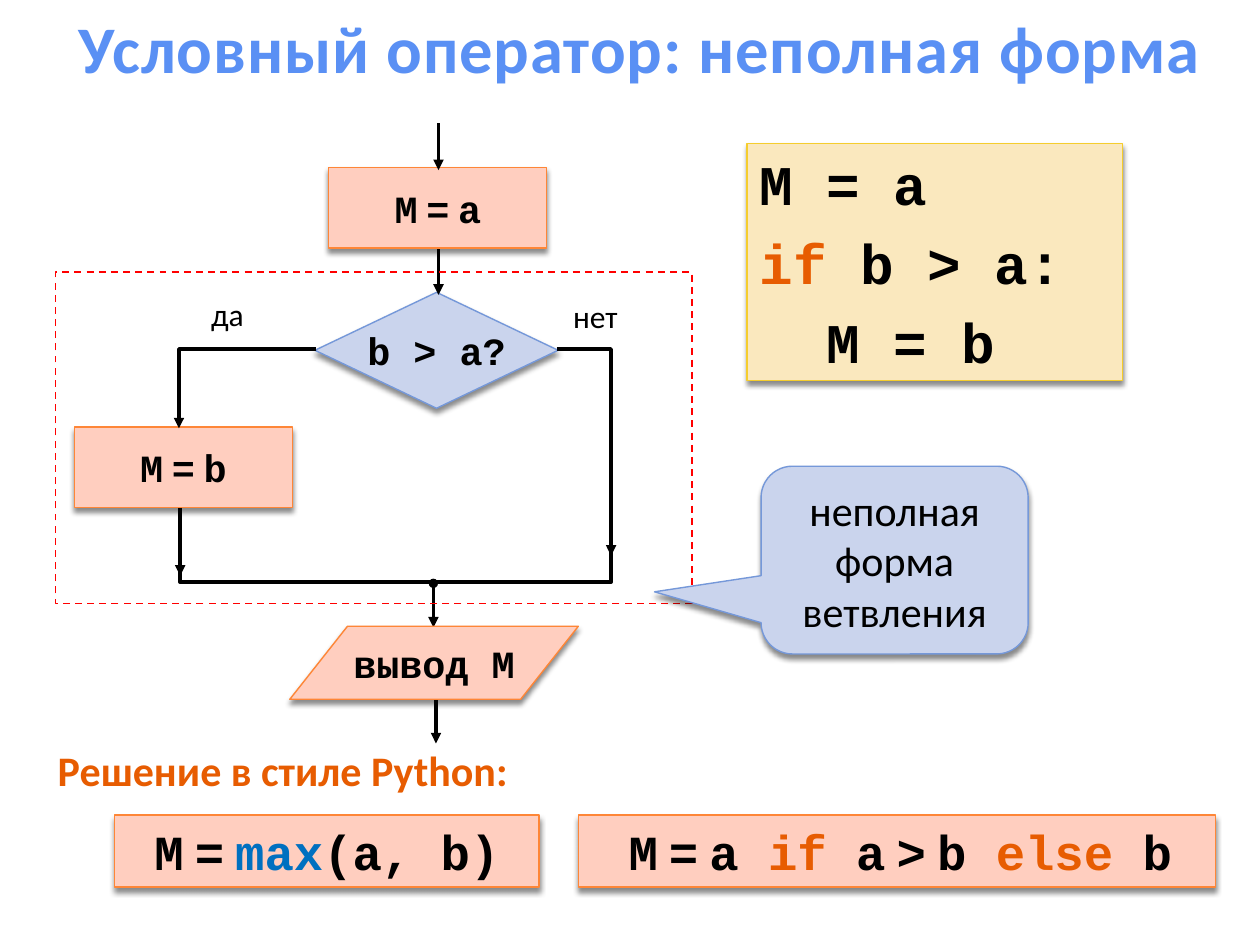
import pptx
import pptx.util
import pptx.dml.color
import pptx.enum.dml
import pptx.enum.shapes
import pptx.enum.text
import pptx.oxml
import pptx.oxml.ns

Inches, Pt = pptx.util.Inches, pptx.util.Pt
RGBColor = pptx.dml.color.RGBColor
SHAPE = pptx.enum.shapes.MSO_SHAPE
ALIGN = pptx.enum.text.PP_ALIGN
ANCHOR = pptx.enum.text.MSO_ANCHOR
DASH = pptx.enum.dml.MSO_LINE.DASH

BLACK = RGBColor(0, 0, 0)
RED = RGBColor(0xFF, 0, 0)
PEACH = RGBColor(0xFF, 0xCE, 0xBF)
ORANGE = RGBColor(0xFE, 0x86, 0x37)
PALE_BLUE = RGBColor(0xCA, 0xD4, 0xED)
BLUE = RGBColor(0x75, 0x98, 0xD9)
CREAM = RGBColor(0xFA, 0xE8, 0xBE)
YELLOW = RGBColor(0xF5, 0xCD, 0x2D)
KEYWORD = RGBColor(0xE7, 0x5C, 0x01)
FUNCTION = RGBColor(0x00, 0x70, 0xC0)
TITLE_TOP = RGBColor(0x5A, 0x90, 0xF4)
TITLE_BOTTOM = RGBColor(0x3C, 0x65, 0xB0)

TEXT_FONT = "Calibri"
CODE_FONT = "Courier New"
ACTION = (PEACH, ORANGE)
CONDITION = (PALE_BLUE, BLUE)
LISTING = (CREAM, YELLOW)

SHADOW = (
    '<a:effectLst %s><a:outerShdw blurRad="38100" dist="30480" dir="5400000" '
    'rotWithShape="0"><a:srgbClr val="000000"><a:alpha val="45000"/></a:srgbClr>'
    '</a:outerShdw></a:effectLst>' % pptx.oxml.ns.nsdecls("a"))
NO_EFFECTS = "<a:effectLst %s/>" % pptx.oxml.ns.nsdecls("a")
ARROWHEAD = '<a:tailEnd %s type="triangle"/>' % pptx.oxml.ns.nsdecls("a")


def add_title(slide, text):
    title = slide.shapes.title
    title.left, title.top = Inches(0.16), Inches(0)
    title.width, title.height = Inches(9.84), Inches(0.75)
    title.text_frame.vertical_anchor = ANCHOR.MIDDLE
    paragraph = title.text_frame.paragraphs[0]
    paragraph.alignment = ALIGN.CENTER
    run = paragraph.add_run()
    run.text = text
    font = run.font
    font.name, font.size, font.bold = TEXT_FONT, Pt(38), True
    font.fill.gradient()
    font.fill.gradient_angle = 270
    stops = zip(font.fill.gradient_stops, (0.25, 1), (TITLE_TOP, TITLE_BOTTOM))
    for stop, position, colour in stops:
        stop.position, stop.color.rgb = position, colour
    run._r.get_or_add_rPr().set("spc", "50")


def format_paragraph(paragraph, size, name, bold, colour=BLACK, align=ALIGN.CENTER):
    paragraph.alignment = align
    font = paragraph.font
    font.size, font.name, font.bold = Pt(size), name, bold
    font.color.rgb = colour


def write_code(paragraph, pieces, size, align=ALIGN.CENTER):
    """Write (text, colour) pieces; an underscore marks a narrow space."""
    format_paragraph(paragraph, size, CODE_FONT, True, align=align)
    for text, colour in pieces:
        for index, part in enumerate(text.split("_")):
            if index:
                space = paragraph.add_run()
                space.text, space.font.name = " ", TEXT_FONT
            if part:
                run = paragraph.add_run()
                run.text = part
                if colour != BLACK:
                    run.font.color.rgb = colour


def add_box(slide, kind, place, style):
    box = slide.shapes.add_shape(kind, *map(Inches, place))
    fill, outline = style
    box.fill.solid()
    box.fill.fore_color.rgb = fill
    box.line.color.rgb = outline
    box.line.width = Pt(0.79)
    box._element.spPr.append(pptx.oxml.parse_xml(SHADOW))
    box.text_frame.vertical_anchor = ANCHOR.MIDDLE
    box.text_frame.word_wrap = True
    return box


def add_step(slide, kind, place, style, text):
    step = add_box(slide, kind, place, style)
    step.text_frame.word_wrap = False
    write_code(step.text_frame.paragraphs[0], [(text, BLACK)], 22)


def add_code_box(slide, place, style, lines, size, align, space_before=0):
    frame = add_box(slide, SHAPE.RECTANGLE, place, style).text_frame
    frame.vertical_anchor = ANCHOR.TOP
    for index, pieces in enumerate(lines):
        paragraph = frame.add_paragraph() if index else frame.paragraphs[0]
        write_code(paragraph, pieces, size, align)
        paragraph.space_before = Pt(space_before)
    return frame


def add_label(slide, place, text, size, bold=False, colour=BLACK,
              align=ALIGN.CENTER, wrap=True):
    label = slide.shapes.add_textbox(*map(Inches, place))
    label.text_frame.word_wrap = wrap
    paragraph = label.text_frame.paragraphs[0]
    paragraph.text = text
    format_paragraph(paragraph, size, TEXT_FONT, bold, colour, align)


def style_flow(flow, arrow):
    flow.line.color.rgb = BLACK
    flow.line.width = Pt(2)
    if arrow:
        flow.line._get_or_add_ln().append(pptx.oxml.parse_xml(ARROWHEAD))


def add_arrow(slide, x, top, bottom):
    arrow = slide.shapes.add_connector(
        pptx.enum.shapes.MSO_CONNECTOR.STRAIGHT,
        Inches(x), Inches(top), Inches(x), Inches(bottom))
    style_flow(arrow, True)
    arrow._element.spPr.append(pptx.oxml.parse_xml(NO_EFFECTS))


def add_branch(slide, points, arrow):
    start, *rest = [(Inches(x), Inches(y)) for x, y in points]
    builder = slide.shapes.build_freeform(*start)
    builder.add_line_segments(rest, close=False)
    branch = builder.convert_to_shape()
    branch.fill.background()
    style_flow(branch, arrow)
    branch.shadow.inherit = False


def add_flowchart(slide):
    # Condition and its action
    add_step(slide, SHAPE.RECTANGLE, (0.59, 3.39, 1.73, 0.64), ACTION, "M_=_b")
    add_step(slide, SHAPE.FLOWCHART_DECISION, (2.5, 2.32, 1.93, 0.92),
             CONDITION, "b > a?")
    add_arrow(slide, 3.48, 1.97, 2.34)
    add_arrow(slide, 3.46, 5.55, 5.9)

    # Branches and the point where they meet
    add_branch(slide, [(4.42, 2.77), (4.85, 2.77), (4.85, 4.41)], True)
    add_branch(slide, [(2.51, 2.77), (1.42, 2.77), (1.42, 3.4)], True)
    add_branch(slide, [(1.43, 4.03), (1.43, 4.62), (4.85, 4.62), (4.85, 4.03)], False)
    add_arrow(slide, 1.43, 4.22, 4.57)
    add_arrow(slide, 3.44, 4.63, 4.98)
    junction = slide.shapes.add_shape(
        SHAPE.OVAL, *map(Inches, (3.41, 4.6, 0.06, 0.06)))
    junction.fill.solid()
    junction.fill.fore_color.rgb = BLACK
    junction.line.color.rgb = BLACK
    junction.line.width = Pt(1)
    junction.shadow.inherit = False
    add_label(slide, (1.43, 2.29, 0.75, 0.4), "да", 18)
    add_label(slide, (4.35, 2.31, 0.75, 0.4), "нет", 18)

    # Output and first assignment
    add_step(slide, SHAPE.FLOWCHART_DATA, (2.3, 4.97, 2.29, 0.58), ACTION, "вывод M")
    add_step(slide, SHAPE.RECTANGLE, (2.61, 1.33, 1.73, 0.64), ACTION, "M_=_a")
    add_arrow(slide, 3.48, 0.98, 1.35)

    # Frame around the branching
    frame = slide.shapes.add_shape(
        SHAPE.RECTANGLE, *map(Inches, (0.44, 2.16, 5.05, 2.63)))
    frame.fill.background()
    frame.line.color.rgb = RED
    frame.line.width = Pt(1)
    frame.line.dash_style = DASH.DASH
    frame.shadow.inherit = False


def add_callout(slide, text):
    callout = add_box(slide, SHAPE.ROUNDED_RECTANGULAR_CALLOUT,
                      (6.04, 3.7, 2.12, 1.49), CONDITION)
    for index, value in enumerate((-0.899, 0.169, 0.167)):
        callout.adjustments[index] = value
    paragraph = callout.text_frame.paragraphs[0]
    paragraph.text = text
    format_paragraph(paragraph, 24, TEXT_FONT, False)


def main():
    deck = pptx.Presentation()
    deck.slide_width, deck.slide_height = Inches(10), Inches(7.5)
    slide = deck.slides.add_slide(deck.slide_layouts[5])

    add_title(slide, "Условный оператор: неполная форма")
    add_flowchart(slide)
    add_callout(slide, "неполная форма ветвления")

    # Program listing
    add_code_box(slide, (5.93, 1.14, 2.98, 1.88), LISTING, [
        [("M = a", BLACK)],
        [("if", KEYWORD), (" b > a:", BLACK)],
        [("  M = b", BLACK)],
    ], 32, ALIGN.LEFT, 6.5)

    # Python-style solutions
    add_code_box(slide, (0.91, 6.47, 3.37, 0.57), ACTION, [
        [("M_=_", BLACK), ("max", FUNCTION), ("(a, b)", BLACK)],
    ], 28, ALIGN.CENTER)
    add_label(slide, (0.36, 5.86, 3.9, 0.5), "Решение в стиле Python:", 24,
              True, KEYWORD, ALIGN.LEFT, False)
    ternary = add_code_box(slide, (4.59, 6.47, 5.06, 0.57), ACTION, [
        [("M_=_a ", BLACK), ("if", KEYWORD), (" a_>_b ", BLACK),
         ("else", KEYWORD), (" b", BLACK)],
    ], 28, ALIGN.JUSTIFY)
    indents = ternary.paragraphs[0]._p.get_or_add_pPr()
    indents.set("marL", str(Inches(0.2)))
    indents.set("indent", str(Inches(0.1)))

    deck.save("out.pptx")


if __name__ == "__main__":
    main()
